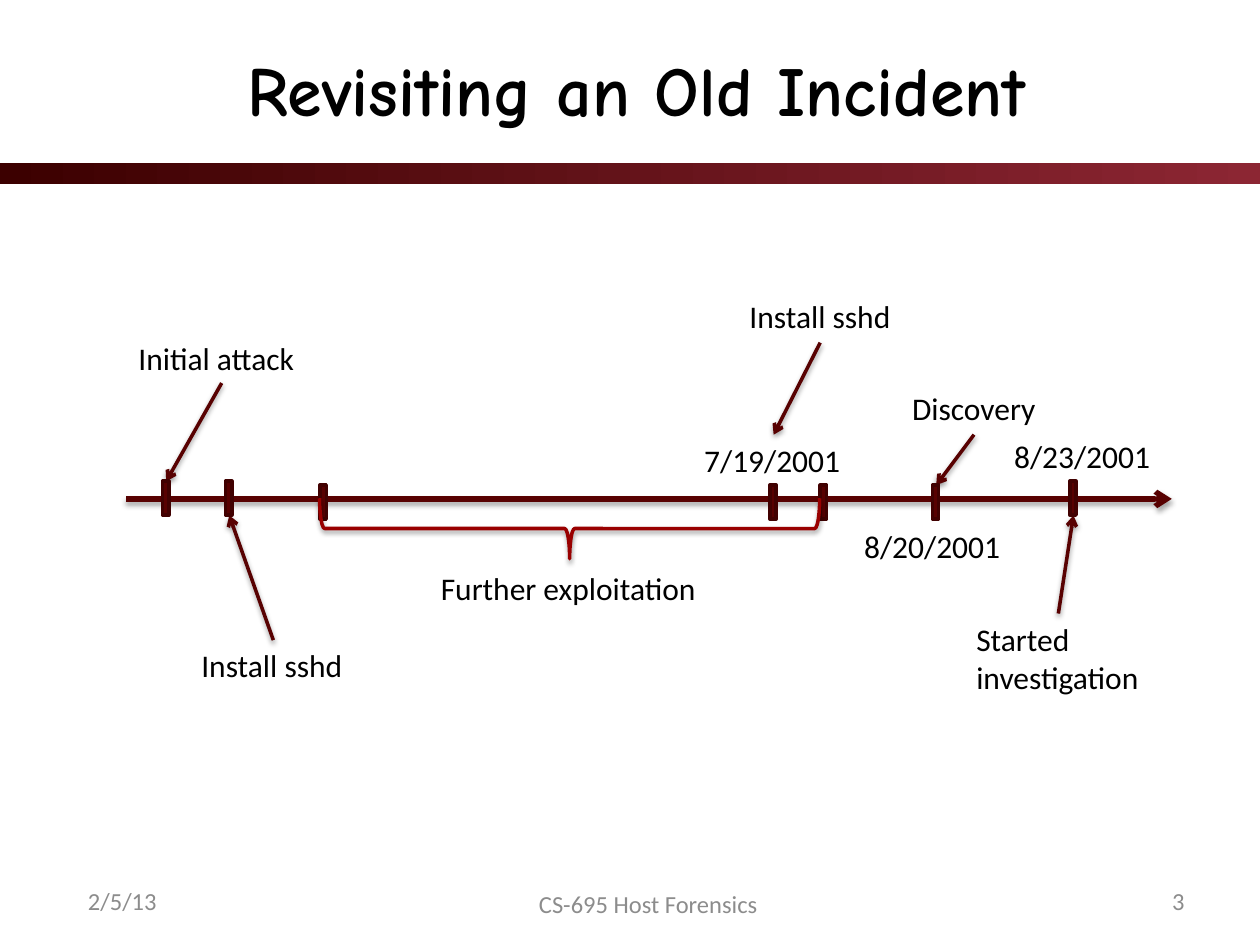
from lxml import etree
from pptx import Presentation
from pptx.dml.color import RGBColor
from pptx.enum import shapes, text
from pptx.oxml import ns
from pptx.util import Pt


def color(value):
    return RGBColor.from_string(value)


def add_shadow(shape, distance, opacity):
    """Drop a soft black shadow straight down; distance in points, opacity in percent."""
    effects = etree.SubElement(shape._element.spPr, ns.qn("a:effectLst"))
    shadow = etree.SubElement(
        effects, ns.qn("a:outerShdw"), blurRad=str(Pt(3.1)),
        dist=str(Pt(distance)), dir="5400000", rotWithShape="0")
    black = etree.SubElement(shadow, ns.qn("a:srgbClr"), val="000000")
    etree.SubElement(black, ns.qn("a:alpha"), val=str(opacity * 1000))


deck = Presentation()
deck.slide_width, deck.slide_height = Pt(720), Pt(540)
page = deck.slides.add_slide(deck.slide_layouts[5])

# Title and the band under it
title = page.shapes.title
title.left, title.top, title.width, title.height = Pt(43.2), Pt(10.8), Pt(640.8), Pt(79.2)
title.text_frame.text = "Revisiting an Old Incident"
title.text_frame.vertical_anchor = text.MSO_ANCHOR.MIDDLE
heading = title.text_frame.paragraphs[0]
heading.alignment = text.PP_ALIGN.CENTER
title_font = {"name": "Comic Neue", "size": Pt(40), "bold": True}
for name, value in title_font.items():
    setattr(heading.font, name, value)
heading.font.color.rgb = color("000000")

band = page.shapes.add_shape(shapes.MSO_SHAPE.RECTANGLE, 0, Pt(93.2), Pt(720), Pt(12.2))
band.shadow.inherit = False
band.line.fill.background()
band.fill.gradient()
band.fill.gradient_angle = 0
for stop, shade in zip(band.fill.gradient_stops, ("3C0000", "8C2633")):
    stop.color.rgb = color(shade)

# Time axis, then the arrows from labels to events: start, end, width, shadow
AXIS_Y = 285.1
lines = [
    ((72, AXIS_Y), (669.6, AXIS_Y), 3, (1.8, 35)),
    ((468.7, 195.8), (442.1, 248.4), 2, (1.6, 38)),
    ((556.6, 248.4), (535, 277.2), 2, (1.6, 38)),
    ((604.8, 350.6), (613.4, 294.5), 2, (1.6, 38)),
    ((156.2, 365.8), (131, 294.5), 2, (1.6, 38)),
    ((126.7, 218.9), (95, 275), 2, (1.6, 38)),
]
for start, end, width, shadow in lines:
    arrow = page.shapes.add_connector(
        shapes.MSO_CONNECTOR.STRAIGHT, *map(Pt, start + end))
    arrow.line.color.rgb = color("580101")
    arrow.line.width = Pt(width)
    outline = arrow._element.spPr.find(ns.qn("a:ln"))
    etree.SubElement(outline, ns.qn("a:tailEnd"), type="arrow")
    add_shadow(arrow, *shadow)

# Event ticks: left and top
ticks = [(92.9, 275), (128.9, 275), (182.9, 277.2), (439.9, 277.2),
         (468.7, 277.2), (532.8, 277.2), (611.3, 275)]
for left, top in ticks:
    tick = page.shapes.add_shape(
        shapes.MSO_SHAPE.RECTANGLE, Pt(left), Pt(top), Pt(3.6), Pt(19.4))
    tick.shadow.inherit = False
    tick.fill.solid()
    tick.fill.fore_color.rgb = color("580101")
    tick.line.color.rgb = color("410101")
    tick.line.width = Pt(2)

# Brace spanning the exploitation period
brace = page.shapes.add_shape(
    shapes.MSO_SHAPE.RIGHT_BRACE, Pt(308.2), Pt(159.1), Pt(34.6), Pt(285.8))
brace.rotation = 90
brace.fill.background()
brace.line.color.rgb = color("990000")
brace.line.width = Pt(2)
add_shadow(brace, 1.6, 38)

# Event labels and footer: words, left, top, width, height, format
event = {"size": 18, "color": "000000", "align": text.PP_ALIGN.LEFT,
         "anchor": text.MSO_ANCHOR.TOP, "wrap": False}
footer = {"size": 14, "color": "8C8C8C", "align": text.PP_ALIGN.LEFT,
          "anchor": text.MSO_ANCHOR.MIDDLE, "wrap": True}
labels = [
    ("Initial attack", 72, 190.1, 109.4, 28.8, event),
    ("Install sshd", 108, 365.8, 95.8, 28.8, event),
    ("Further exploitation", 244.8, 321.8, 162, 28.8, event),
    ("Install sshd", 421.2, 166.3, 95.8, 28.8, event),
    ("7/19/2001", 395.3, 248.4, 92.9, 28.8, event),
    ("Discovery", 514.1, 218.9, 85.7, 28.8, event),
    ("8/20/2001", 486.7, 297.4, 92.9, 28.8, event),
    ("8/23/2001", 572.4, 246.2, 92.9, 28.8, event),
    ("Started\ninvestigation", 550.8, 350.6, 108.7, 51.1, event),
    ("2/5/13", 43.2, 500.4, 131.8, 28.8, footer),
    ("CS-695 Host Forensics", 280.8, 501.8, 179.3, 28.8,
     {**footer, "align": text.PP_ALIGN.CENTER}),
    ("3", 552.2, 500.4, 131.8, 28.8, {**footer, "align": text.PP_ALIGN.RIGHT}),
]
for words, left, top, width, height, style in labels:
    box = page.shapes.add_textbox(Pt(left), Pt(top), Pt(width), Pt(height))
    frame = box.text_frame
    frame.text = words
    frame.word_wrap = style["wrap"]
    frame.vertical_anchor = style["anchor"]
    for para in frame.paragraphs:
        para.alignment = style["align"]
        para.font.name = "Calibri"
        para.font.size = Pt(style["size"])
        para.font.color.rgb = color(style["color"])

deck.save("out.pptx")
